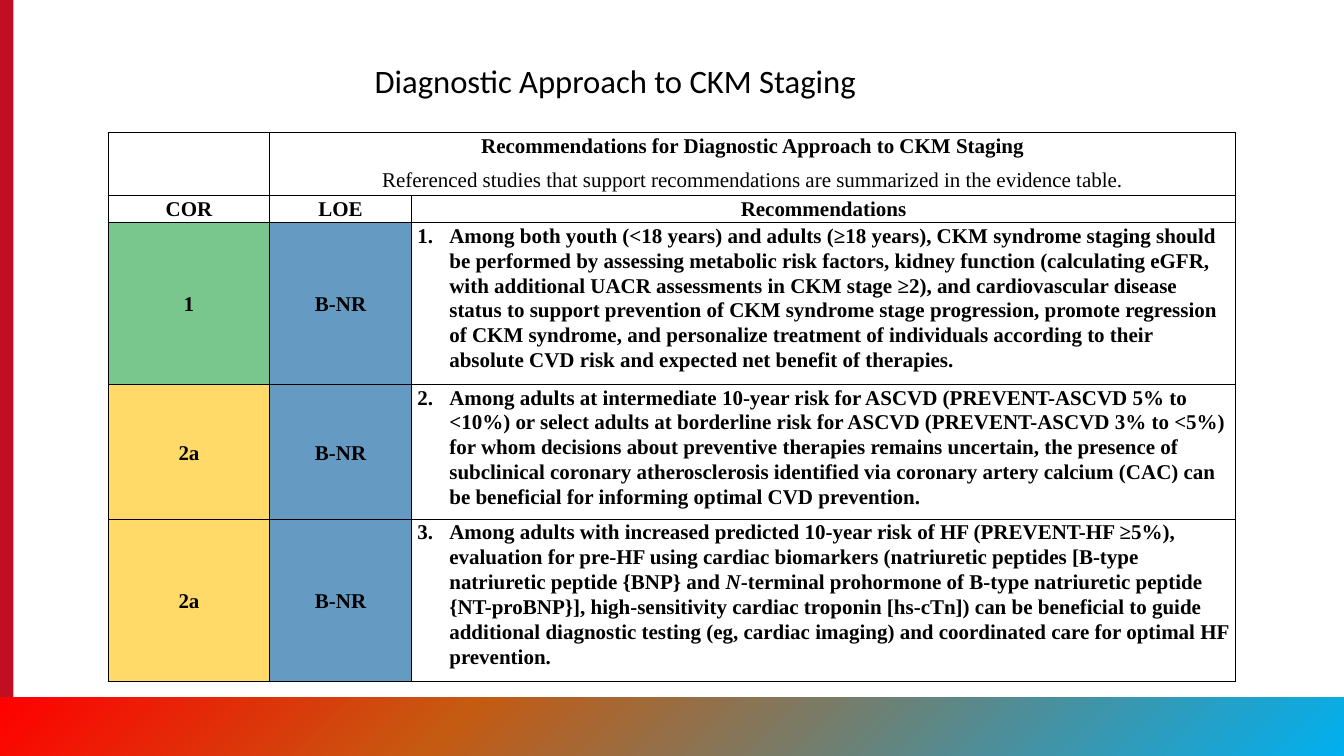
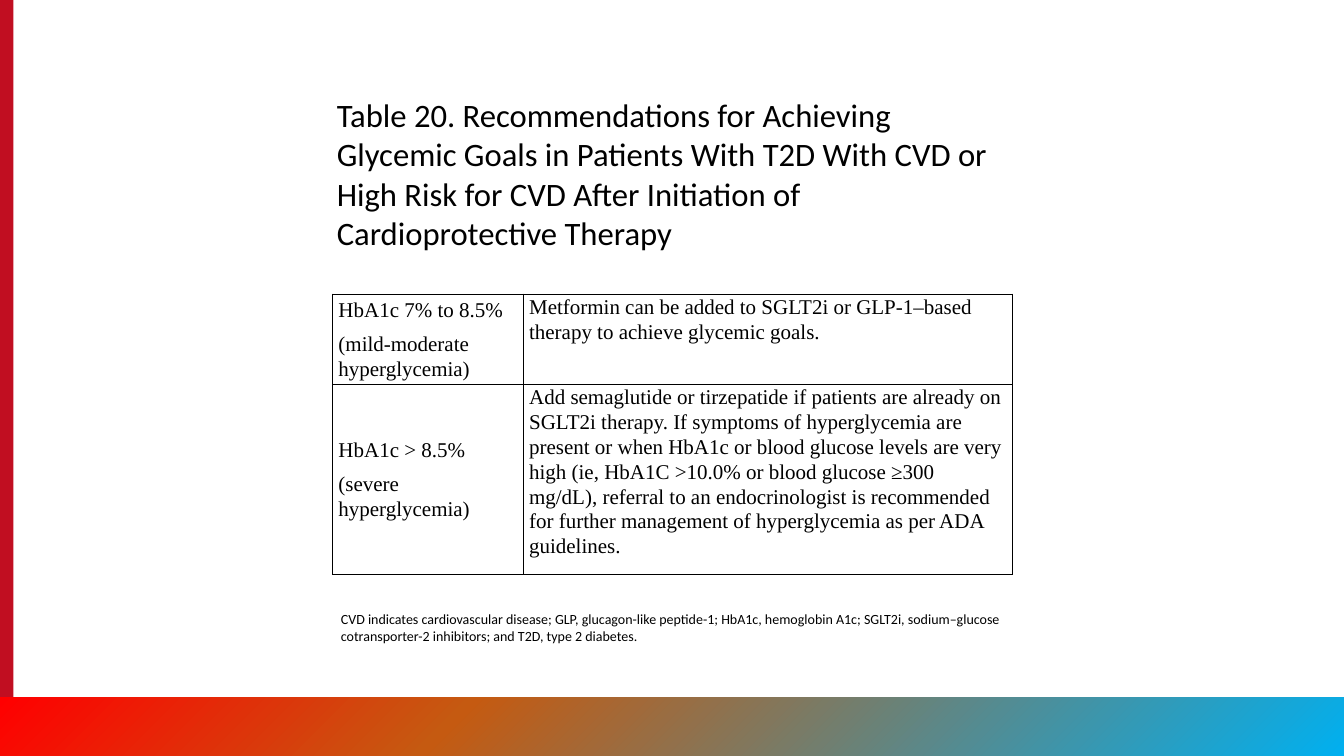
from pptx import Presentation
from pptx.dml.color import RGBColor
from pptx.enum.shapes import MSO_SHAPE
from pptx.enum.text import MSO_ANCHOR, MSO_AUTO_SIZE, PP_ALIGN
from pptx.oxml import parse_xml
from pptx.oxml.ns import nsdecls, qn
from pptx.util import Inches, Pt
from lxml.etree import SubElement

BLACK = RGBColor(0x00, 0x00, 0x00)
STRIPE_RED = RGBColor(0xC1, 0x0E, 0x21)
CLASS_1_GREEN = RGBColor(0x79, 0xC7, 0x8D)
CLASS_2A_YELLOW = RGBColor(0xFF, 0xDA, 0x68)
EVIDENCE_BLUE = RGBColor(0x65, 0x9B, 0xC2)
BAND_STOPS = [
    (0, RGBColor(0x00, 0xB0, 0xF0)),
    (66, RGBColor(0xC5, 0x5A, 0x11)),
    (100, RGBColor(0xFF, 0x00, 0x00)),
]
HEADING_FONT = "Calibri"
TABLE_FONT = "Times New Roman"

# The slide is a grid of 16 columns and 9 rows
COLUMNS, ROWS = 16, 9
deck = Presentation()
deck.slide_width, deck.slide_height = Inches(16), Inches(9)


def grid(*steps):
    """Turn grid steps into lengths."""
    return [round(step * deck.slide_width / COLUMNS) for step in steps]


def write_cell(cell, text, align=PP_ALIGN.LEFT, anchor=MSO_ANCHOR.TOP,
               bold=False, fill=None, number=None):
    """Fill one bordered cell; words between asterisks are italic."""
    properties = cell._tc.get_or_add_tcPr()
    for side in ("lnL", "lnR", "lnT", "lnB"):
        properties.append(parse_xml(
            f'<a:{side} {nsdecls("a")} w="{Pt(1)}"><a:solidFill>'
            f'<a:srgbClr val="{BLACK}"/></a:solidFill></a:{side}>'))
    if fill is None:
        cell.fill.background()
    else:
        cell.fill.solid()
        cell.fill.fore_color.rgb = fill
    cell.margin_left, cell.margin_right = grid(0.07, 0.07)
    cell.margin_top = cell.margin_bottom = 0
    cell.vertical_anchor = anchor

    frame = cell.text_frame
    for index, line in enumerate(text.split("\n")):
        paragraph = frame.add_paragraph() if index else frame.paragraphs[0]
        if number:
            indent, = grid(0.38)
            layout = paragraph._p.get_or_add_pPr()
            layout.set("marL", str(indent))
            layout.set("indent", str(-indent))
            SubElement(layout, qn("a:buAutoNum"), type="arabicPeriod",
                       startAt=str(number))
        for part_index, part in enumerate(line.split("*")):
            run = paragraph.add_run()
            run.text = part
            if part_index % 2:
                run.font.italic = True
        paragraph.alignment = align
        paragraph.line_spacing = 1.07
        paragraph.space_after = Pt(8)
        paragraph.font.name = TABLE_FONT
        paragraph.font.size = Pt(18)
        paragraph.font.bold = bold
        paragraph.font.color.rgb = BLACK


# Titles and empty tables
outline = [
    ("Diagnostic Approach to CKM Staging", (4.36, 0.67, 7.27, 0.57),
     (1.29, 1.58), (1.92, 1.69, 9.81), (0.59, 0.25, 1.52, 1.29, 1.52)),
    ("Table 20. Recommendations for Achieving Glycemic Goals in Patients With "
     "T2D With CVD or High Risk for CVD After Initiation of Cardioprotective "
     "Therapy", (3.91, 1.08, 8.19, 1.99),
     (3.96, 3.5), (2.27, 5.83), (1.07, 2.26)),
]
title_layout = deck.slide_layouts.get_by_name("Title Only")
slides, tables = [], []
for heading, heading_box, corner, widths, heights in outline:
    slide = deck.slides.add_slide(title_layout)
    title = slide.shapes.title
    title.left, title.top, title.width, title.height = grid(*heading_box)
    title.text_frame.text = heading
    title.text_frame.word_wrap = True
    title.text_frame.vertical_anchor = MSO_ANCHOR.TOP
    title.text_frame.auto_size = MSO_AUTO_SIZE.SHAPE_TO_FIT_TEXT
    title_line = title.text_frame.paragraphs[0]
    title_line.alignment = PP_ALIGN.LEFT
    title_line.font.name = HEADING_FONT
    title_line.font.size = Pt(28)
    title_line.font.color.rgb = BLACK

    table = slide.shapes.add_table(
        len(heights), len(widths), *grid(*corner),
        *grid(sum(widths), sum(heights))).table
    table.first_row = table.horz_banding = False
    for column, width in zip(table.columns, grid(*widths)):
        column.width = width
    for row, height in zip(table.rows, grid(*heights)):
        row.height = height
    slides.append(slide)
    tables.append(table)
staging_slide, glycemic_slide = slides
staging, glycemic = tables

# Shared stripe and gradient band, moved to the layout
stripe = staging_slide.shapes.add_shape(
    MSO_SHAPE.RECTANGLE, *grid(0, 0, 0.16, ROWS))
stripe.fill.solid()
stripe.fill.fore_color.rgb = STRIPE_RED
band = staging_slide.shapes.add_shape(
    MSO_SHAPE.RECTANGLE, *grid(0, 8.3, COLUMNS, 0.7))
band.rotation = 180
band.fill.gradient()
band.fill.gradient_angle = 315
stop_list = band.element.spPr.find(qn("a:gradFill")).find(qn("a:gsLst"))
for old_stop in list(stop_list):
    stop_list.remove(old_stop)
for percent, colour in BAND_STOPS:
    stop = SubElement(stop_list, qn("a:gs"), pos=str(percent * 1000))
    SubElement(stop, qn("a:srgbClr"), val=str(colour))
for decoration in (stripe, band):
    decoration.line.fill.background()
    decoration.shadow.inherit = False
    title_layout.shapes.element.append(decoration.element)

# Staging table: heading rows
staging.cell(0, 1).merge(staging.cell(0, 2))
write_cell(staging.cell(0, 0), "")
write_cell(
    staging.cell(0, 1),
    "Recommendations for Diagnostic Approach to CKM Staging\n"
    "Referenced studies that support recommendations are summarized in the "
    "evidence table.", PP_ALIGN.CENTER, bold=True)
staging.cell(0, 1).text_frame.paragraphs[1].font.bold = False
write_cell(staging.cell(0, 2), "")
for column_index, label in enumerate(("COR", "LOE", "Recommendations")):
    write_cell(staging.cell(1, column_index), label, PP_ALIGN.CENTER, bold=True)

# Staging table: recommendations
recommendations = [
    ("1", CLASS_1_GREEN,
     "Among both youth (<18 years) and adults (≥18 years), CKM syndrome "
     "staging should be performed by assessing metabolic risk factors, kidney "
     "function (calculating eGFR, with additional UACR assessments in CKM "
     "stage ≥2), and cardiovascular disease status to support prevention of "
     "CKM syndrome stage progression, promote regression of CKM syndrome, and "
     "personalize treatment of individuals according to their absolute CVD "
     "risk and expected net benefit of therapies."),
    ("2a", CLASS_2A_YELLOW,
     "Among adults at intermediate 10-year risk for ASCVD (PREVENT-ASCVD 5% "
     "to <10%) or select adults at borderline risk for ASCVD (PREVENT-ASCVD "
     "3% to <5%) for whom decisions about preventive therapies remains "
     "uncertain, the presence of subclinical coronary atherosclerosis "
     "identified via coronary artery calcium (CAC) can be beneficial for "
     "informing optimal CVD prevention."),
    ("2a", CLASS_2A_YELLOW,
     "Among adults with increased predicted 10-year risk of HF (PREVENT-HF "
     "≥5%), evaluation for pre-HF using cardiac biomarkers (natriuretic "
     "peptides [B-type natriuretic peptide {BNP} and *N*-terminal prohormone "
     "of B-type natriuretic peptide {NT-proBNP}], high-sensitivity cardiac "
     "troponin [hs-cTn]) can be beneficial to guide additional diagnostic "
     "testing (eg, cardiac imaging) and coordinated care for optimal HF "
     "prevention."),
]
for number, (strength, colour, advice) in enumerate(recommendations, 1):
    row_index = number + 1
    ratings = ((strength, colour), ("B-NR", EVIDENCE_BLUE))
    for column_index, (rating, rating_colour) in enumerate(ratings):
        write_cell(staging.cell(row_index, column_index), rating,
                   PP_ALIGN.CENTER, MSO_ANCHOR.MIDDLE, True, rating_colour)
    write_cell(staging.cell(row_index, 2), advice, bold=True, number=number)

# Glycemic table
glycemic_goals = [
    ("HbA1c 7% to 8.5%\n(mild-moderate hyperglycemia)",
     "Metformin can be added to SGLT2i or GLP-1–based therapy to achieve "
     "glycemic goals."),
    ("HbA1c > 8.5%\n(severe hyperglycemia)",
     "Add semaglutide or tirzepatide if patients are already on SGLT2i "
     "therapy. If symptoms of hyperglycemia are present or when HbA1c or "
     "blood glucose levels are very high (ie, HbA1C >10.0% or blood glucose "
     "≥300 mg/dL), referral to an endocrinologist is recommended for further "
     "management of hyperglycemia as per ADA guidelines."),
]
for row_index, (level, therapy) in enumerate(glycemic_goals):
    write_cell(glycemic.cell(row_index, 0), level, anchor=MSO_ANCHOR.MIDDLE)
    write_cell(glycemic.cell(row_index, 1), therapy)

# Abbreviations under the glycemic table
abbreviations = glycemic_slide.shapes.add_textbox(
    *grid(3.96, 7.22, 8.09, 0.5)).text_frame
abbreviations.word_wrap = True
abbreviations.auto_size = MSO_AUTO_SIZE.SHAPE_TO_FIT_TEXT
abbreviations.text = (
    "CVD indicates cardiovascular disease; GLP, glucagon-like peptide-1; "
    "HbA1c, hemoglobin A1c; SGLT2i, sodium–glucose cotransporter-2 "
    "inhibitors; and T2D, type 2 diabetes.")
abbreviation_line = abbreviations.paragraphs[0]
abbreviation_line.font.name = HEADING_FONT
abbreviation_line.font.size = Pt(12)
abbreviation_line.font.color.rgb = BLACK

deck.save("out.pptx")
